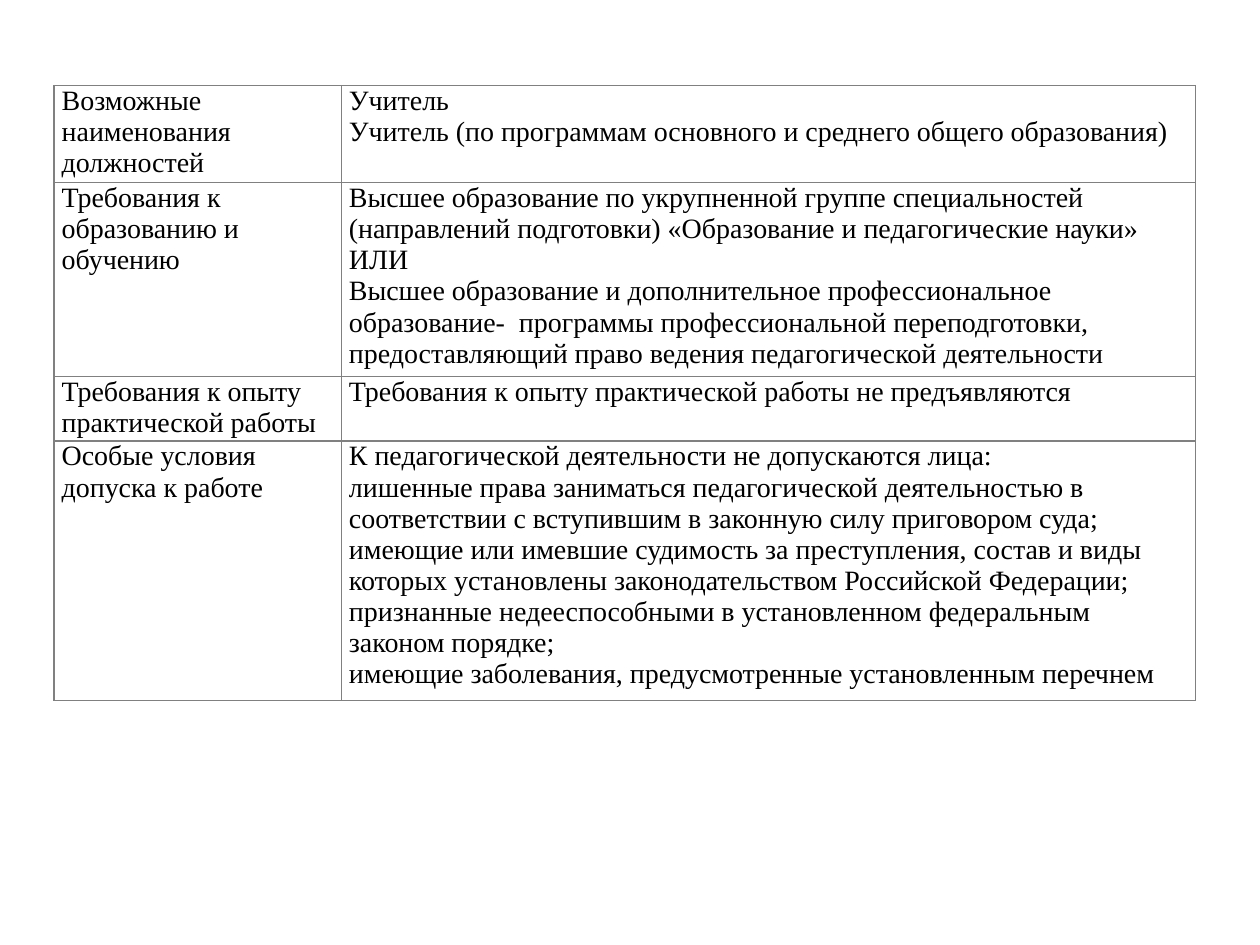
from pptx import Presentation, util as u
from pptx.dml.color import RGBColor
from pptx.oxml.ns import qn
from lxml import etree

# (row height, requirement, paragraphs of the description)
ROWS = [
    (0.77, "Возможные наименования должностей", [
        "Учитель",
        "Учитель (по программам основного и среднего общего образования)",
    ]),
    (1.54, "Требования к образованию и обучению", [
        "Высшее образование по укрупненной группе специальностей "
        "(направлений подготовки) «Образование и педагогические науки»",
        "ИЛИ",
        "Высшее образование и дополнительное профессиональное "
        "образование-  программы профессиональной переподготовки, "
        "предоставляющий право ведения педагогической деятельности",
    ]),
    (0.51, "Требования к опыту практической работы", [
        "Требования к опыту практической работы не предъявляются",
    ]),
    (2.06, "Особые условия допуска к работе", [
        "К педагогической деятельности не допускаются лица:",
        "лишенные права заниматься педагогической деятельностью в "
        "соответствии с вступившим в законную силу приговором суда;",
        "имеющие или имевшие судимость за преступления, состав и виды "
        "которых установлены законодательством Российской Федерации;",
        "признанные недееспособными в установленном федеральным законом порядке;",
        "имеющие заболевания, предусмотренные установленным перечнем",
    ]),
]
COLUMN_WIDTHS = [2.28, 6.78]
LEFT, TOP = 0.43, 0.68
COLORS = {"text": "000000", "border": "808080"}
FONT = {"name": "Times New Roman", "size": u.Pt(16), "bold": False}
MARGINS = {
    "margin_left": u.Inches(0.06), "margin_right": u.Inches(0.06),
    "margin_top": 0, "margin_bottom": 0,
}


def set_format(target, values):
    for name, value in values.items():
        setattr(target, name, value)


def add_borders(cell):
    properties = cell._tc.get_or_add_tcPr()
    for index, side in enumerate(("lnL", "lnR", "lnT", "lnB")):
        line = etree.Element(qn(f"a:{side}"), w=str(u.Pt(1)))
        fill = etree.SubElement(line, qn("a:solidFill"))
        etree.SubElement(fill, qn("a:srgbClr"), val=COLORS["border"])
        properties.insert(index, line)


def fill_cell(cell, paragraphs):
    set_format(cell, MARGINS)
    cell.fill.background()
    add_borders(cell)
    cell.text = "\n".join(paragraphs)
    for para in cell.text_frame.paragraphs:
        for span in para.runs:
            set_format(span.font, FONT)
            span.font.color.rgb = RGBColor.from_string(COLORS["text"])


def main():
    deck = Presentation()
    deck.slide_width, deck.slide_height = u.Inches(10), u.Inches(7.5)
    page = deck.slides.add_slide(deck.slide_layouts[6])

    table = page.shapes.add_table(
        len(ROWS), len(COLUMN_WIDTHS), u.Inches(LEFT), u.Inches(TOP),
        u.Inches(sum(COLUMN_WIDTHS)), u.Inches(sum(row[0] for row in ROWS)),
    ).table
    set_format(table, {"first_row": False, "horz_banding": False})
    for column, width in zip(table.columns, COLUMN_WIDTHS):
        column.width = u.Inches(width)
    for row, (height, requirement, description) in zip(table.rows, ROWS):
        row.height = u.Inches(height)
        for cell, paragraphs in zip(row.cells, ([requirement], description)):
            fill_cell(cell, paragraphs)

    deck.save("out.pptx")


if __name__ == "__main__":
    main()
